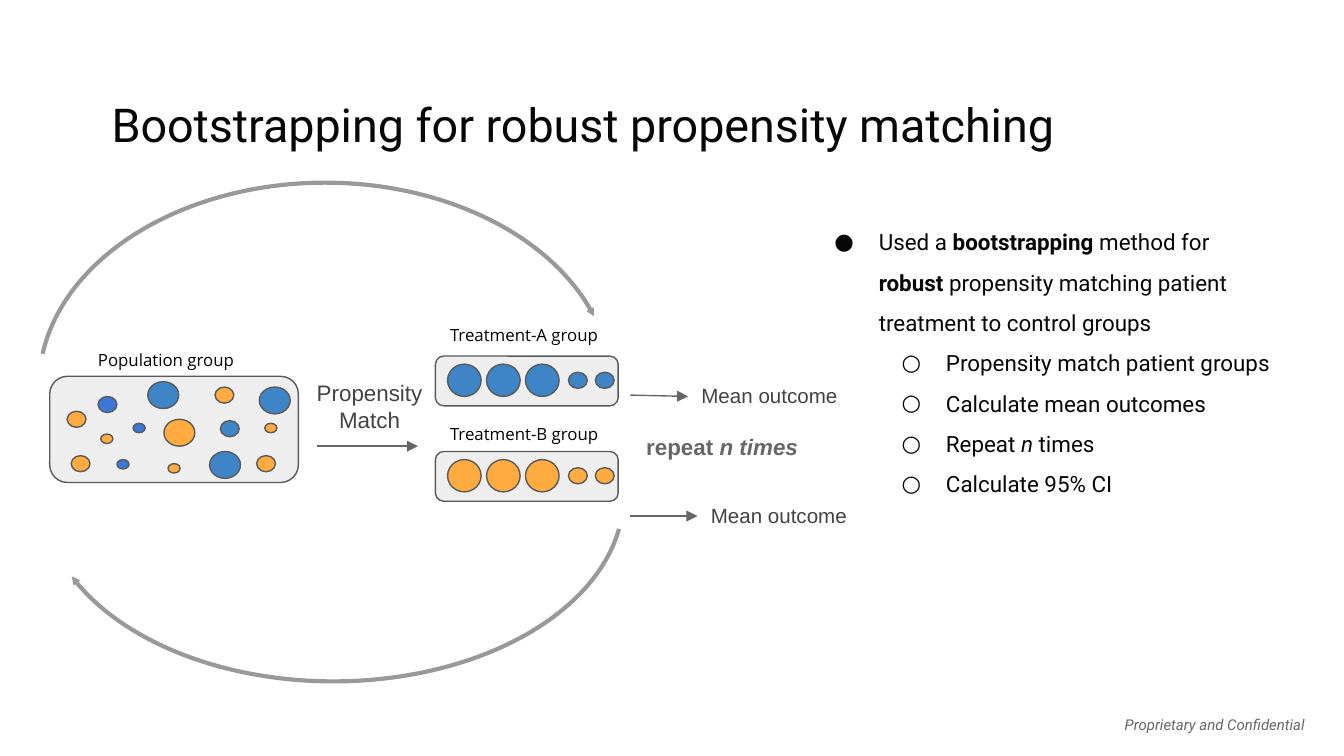
import pptx
import pptx.util
import pptx.dml.color
import pptx.enum.shapes
import pptx.enum.text
import pptx.oxml.ns
import lxml.etree

Inches = pptx.util.Inches
Pt = pptx.util.Pt
RGBColor = pptx.dml.color.RGBColor
SHAPE = pptx.enum.shapes.MSO_SHAPE
ALIGN = pptx.enum.text.PP_ALIGN
ANCHOR = pptx.enum.text.MSO_ANCHOR
qn = pptx.oxml.ns.qn

BLACK = RGBColor(0x00, 0x00, 0x00)
INK = RGBColor(0x07, 0x07, 0x07)
DARK_GRAY = RGBColor(0x43, 0x43, 0x43)
OUTLINE = RGBColor(0x59, 0x59, 0x59)
GRAY = RGBColor(0x66, 0x66, 0x66)
ARC_GRAY = RGBColor(0x99, 0x99, 0x99)
PANEL = RGBColor(0xEE, 0xEE, 0xEE)
ORANGE = RGBColor(0xFF, 0xAB, 0x40)
BLUE = RGBColor(0x3D, 0x85, 0xC6)
ROYAL = RGBColor(0x3C, 0x78, 0xD8)


def add_runs(frame, para, runs, size, font, color):
    frame.word_wrap = True
    frame.margin_left = frame.margin_right = Inches(0.1)
    frame.margin_top = frame.margin_bottom = Inches(0.1)
    for text, style in runs:
        span = para.add_run()
        span.text = text
        span.font.size = Pt(size)
        span.font.name = font
        span.font.color.rgb = color
        span.font.bold = "b" in style
        span.font.italic = "i" in style


def add_outlined(group, kind, left, top, width, height, fill):
    shape = group.shapes.add_shape(kind, Inches(left), Inches(top), Inches(width), Inches(height))
    shape.shadow.inherit = False
    shape.fill.solid()
    shape.fill.fore_color.rgb = fill
    shape.line.color.rgb = OUTLINE
    shape.line.width = Pt(0.75)


deck = pptx.Presentation()
deck.slide_width = Inches(10)
deck.slide_height = Inches(10 * 9 / 16)
page = deck.slides.add_slide(deck.slide_layouts[5])

title = page.shapes.title
title.left, title.top = Inches(0.73), Inches(0.61)
title.width, title.height = Inches(8.18), Inches(0.63)
title.text_frame.vertical_anchor = ANCHOR.TOP
title_para = title.text_frame.paragraphs[0]
title_para.alignment = ALIGN.LEFT
add_runs(title.text_frame, title_para,
         [("Bootstrapping for robust propensity matching", "")], 25, "Roboto", INK)

bullets = [
    (0, [("Used a ", ""), ("bootstrapping", "b"), (" method for ", ""), ("robust", "b"),
         (" propensity matching patient treatment to control groups", "")]),
    (1, [("Propensity match patient groups", "")]),
    (1, [("Calculate mean outcomes", "")]),
    (1, [("Repeat ", ""), ("n ", "i"), ("times", "")]),
    (1, [("Calculate 95% CI", "")]),
]
body = page.shapes.add_textbox(Inches(5.94), Inches(1.5), Inches(3.62), Inches(3.43)).text_frame
for index, (level, runs) in enumerate(bullets):
    para = body.add_paragraph() if index else body.paragraphs[0]
    para.level = level
    para.line_spacing = 1.5
    properties = para._p.get_or_add_pPr()
    properties.set("marL", str(Inches(0.5 + 0.5 * level)))
    properties.set("indent", str(Inches(-0.33)))
    bullet_color = lxml.etree.SubElement(properties, qn("a:buClr"))
    lxml.etree.SubElement(bullet_color, qn("a:srgbClr")).set("val", str(INK))
    lxml.etree.SubElement(properties, qn("a:buFont")).set("typeface", "Roboto")
    lxml.etree.SubElement(properties, qn("a:buChar")).set("char", "●○"[level])
    add_runs(body, para, runs, 12, "Roboto", INK)

labels = [
    (8.27, 5.26, 1.82, 0.34, [("Proprietary and Confidential", "i")], 8, "Roboto", GRAY, ALIGN.LEFT),
    (2.24, 2.72, 1.02, 0.61, [("Propensity Match", "")], 12, "Arial", DARK_GRAY, ALIGN.CENTER),
    (5.12, 2.76, 1.28, 0.39, [("Mean outcome", "")], 11, "Arial", DARK_GRAY, ALIGN.LEFT),
    (5.19, 3.65, 1.42, 0.39, [("Mean outcome", "")], 11, "Arial", DARK_GRAY, ALIGN.LEFT),
    (4.71, 3.12, 1.8, 0.4, [("repeat ", "b"), ("n times", "bi")], 12, "Arial", GRAY, ALIGN.LEFT),
    (0.63, 2.53, 1.49, 0.35, [("Population group", "")], 9, "Open Sans", BLACK, ALIGN.LEFT),
    (3.25, 2.34, 1.49, 0.35, [("Treatment-A group", "")], 9, "Open Sans", BLACK, ALIGN.LEFT),
    (3.25, 3.08, 1.49, 0.35, [("Treatment-B group", "")], 9, "Open Sans", BLACK, ALIGN.LEFT),
]
for left, top, width, height, runs, size, font, color, align in labels:
    box = page.shapes.add_textbox(Inches(left), Inches(top), Inches(width), Inches(height))
    para = box.text_frame.paragraphs[0]
    para.alignment = align
    add_runs(box.text_frame, para, runs, size, font, color)

arrows = []
for x1, y1, x2, y2 in [(2.36, 3.32, 3.11, 3.32), (4.69, 2.94, 5.12, 2.95), (4.69, 3.84, 5.19, 3.84)]:
    arrow = page.shapes.add_connector(pptx.enum.shapes.MSO_CONNECTOR.STRAIGHT,
                                      Inches(x1), Inches(y1), Inches(x2), Inches(y2))
    arrows.append((arrow, GRAY, 0.75, "med"))

for left, top, width, height, rotation, end_degrees in [
    (0.29, 1.36, 4.26, 3.03, 0, 345.42),
    (0.32, 2.31, 4.32, 2.76, 180, 342.92),
]:
    arc = page.shapes.add_shape(SHAPE.ARC, Inches(left), Inches(top), Inches(width), Inches(height))
    arc.rotation = rotation
    arc.adjustments[0] = 186.57 * 0.6
    arc.adjustments[1] = end_degrees * 0.6
    arc.fill.background()
    arrows.append((arc, ARC_GRAY, 2.25, "sm"))

for arrow, color, weight, head_size in arrows:
    arrow.line.color.rgb = color
    arrow.line.width = Pt(weight)
    head = lxml.etree.SubElement(arrow.line._get_or_add_ln(), qn("a:tailEnd"))
    head.set("type", "triangle")
    head.set("w", head_size)
    head.set("len", head_size)
    lxml.etree.SubElement(arrow._element.spPr, qn("a:effectLst"))

LARGE, MEDIUM, SMALL = (0.23, 0.2), (0.14, 0.12), (0.09, 0.07)
patients = [
    (0.5, 3.06, MEDIUM, ORANGE), (0.75, 3.23, SMALL, ORANGE), (1.97, 3.15, SMALL, ORANGE),
    (1.25, 3.45, SMALL, ORANGE), (1.22, 3.12, LARGE, ORANGE), (1.91, 3.39, MEDIUM, ORANGE),
    (0.53, 3.39, MEDIUM, ORANGE), (1.6, 2.88, MEDIUM, ORANGE), (1.64, 3.13, MEDIUM, BLUE),
    (1.93, 2.88, LARGE, BLUE), (1.1, 2.84, LARGE, BLUE), (1.56, 3.36, LARGE, BLUE),
    (0.87, 3.42, SMALL, ROYAL), (0.99, 3.15, SMALL, ROYAL), (0.73, 2.95, MEDIUM, ROYAL),
]
population = page.shapes.add_group_shape()
add_outlined(population, SHAPE.ROUNDED_RECTANGLE, 0.37, 2.8, 1.85, 0.79, PANEL)
for left, top, (width, height), fill in patients:
    add_outlined(population, SHAPE.OVAL, left, top, width, height, fill)

for top, fill in [(2.65, BLUE), (3.36, ORANGE)]:
    treatment = page.shapes.add_group_shape()
    add_outlined(treatment, SHAPE.ROUNDED_RECTANGLE, 3.24, top, 1.36, 0.37, PANEL)
    for column in range(3):
        add_outlined(treatment, SHAPE.OVAL, 3.33 + 0.29 * column, top + 0.06, 0.25, 0.24, fill)
    for left in (4.23, 4.43):
        add_outlined(treatment, SHAPE.OVAL, left, top + 0.12, *MEDIUM, fill)

deck.save("out.pptx")
